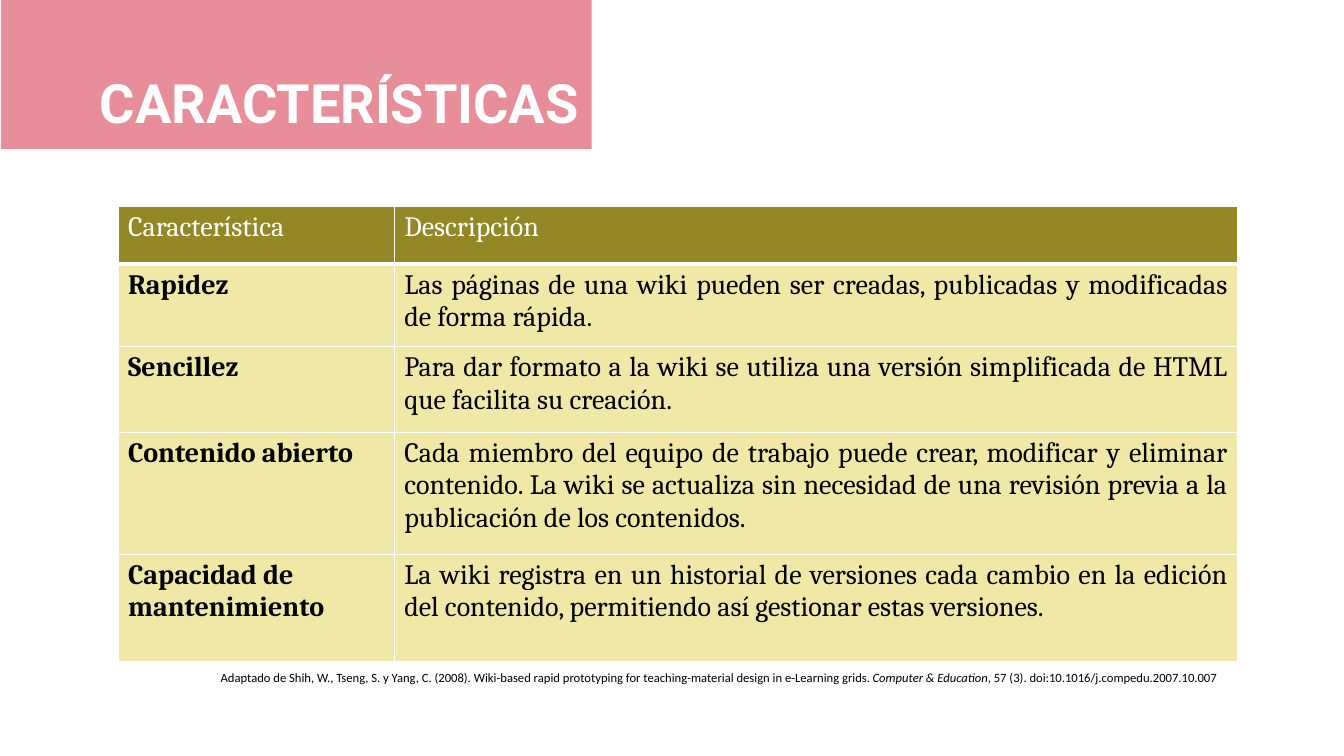
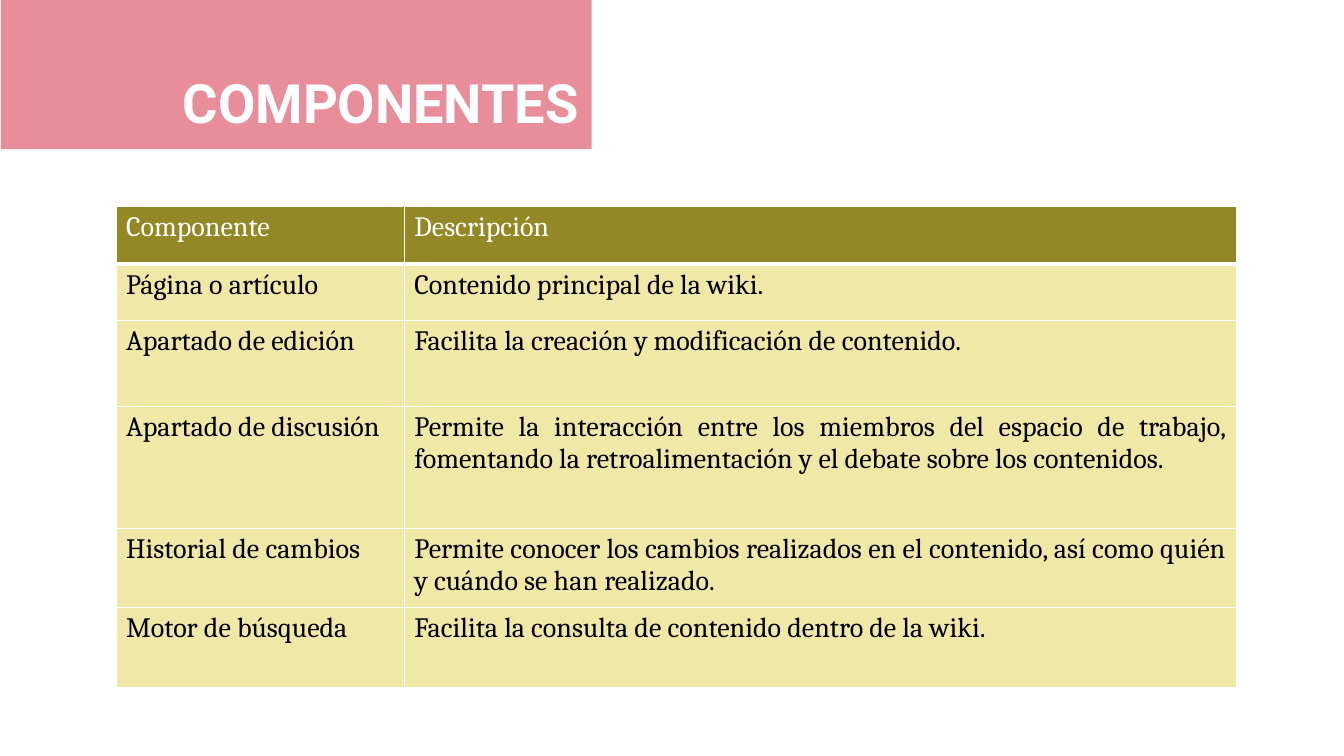
from lxml.etree import SubElement
from pptx import Presentation
from pptx.dml.color import RGBColor
from pptx.enum.shapes import MSO_SHAPE as Shape
from pptx.enum.text import PP_ALIGN as Align
from pptx.oxml.ns import qn
from pptx.util import Inches, Pt

COLORS = {
    "band": "E88E9B",
    "header": "938825",
    "body": "F0E8A7",
    "light": "FFFFFF",
    "dark": "000000",
}
SLIDE_WIDTH, SLIDE_HEIGHT = 13.33, 7.5
BAND_BOX = (0.01, 0, 5.86, 1.48)
TABLE_TOP, TABLE_WIDTH = 2.05, 11.11

FEATURES = [
    ("Característica", "Descripción"),
    ("Rapidez",
     "Las páginas de una wiki pueden ser creadas, publicadas y modificadas "
     "de forma rápida."),
    ("Sencillez",
     "Para dar formato a la wiki se utiliza una versión simplificada de HTML "
     "que facilita su creación."),
    ("Contenido abierto",
     "Cada miembro del equipo de trabajo puede crear, modificar y eliminar "
     "contenido. La wiki se actualiza sin necesidad de una revisión previa a "
     "la publicación de los contenidos."),
    ("Capacidad de mantenimiento",
     "La wiki registra en un historial de versiones cada cambio en la edición "
     "del contenido, permitiendo así gestionar estas versiones."),
]
COMPONENTS = [
    ("Componente", "Descripción"),
    ("Página o artículo", "Contenido principal de la wiki."),
    ("Apartado de edición",
     "Facilita la creación y modificación de contenido."),
    ("Apartado de discusión",
     "Permite la interacción entre los miembros del espacio de trabajo, "
     "fomentando la retroalimentación y el debate sobre los contenidos."),
    ("Historial de cambios",
     "Permite conocer los cambios realizados en el contenido, así como quién "
     "y cuándo se han realizado."),
    ("Motor de búsqueda",
     "Facilita la consulta de contenido dentro de la wiki."),
]
SOURCE = [
    ("Adaptado de Shih, W., Tseng, S. y Yang, C. (2008). Wiki-based rapid "
     "prototyping for teaching-material design in e-Learning grids. ", False),
    ("Computer & Education", True),
    (", 57 (3). doi:10.1016/j.compedu.2007.10.007", False),
]


def rgb(name):
    return RGBColor.from_string(COLORS[name])


def write(frame, *runs, font, size, color="dark", bold=False, align=Align.LEFT):
    """Fill the first paragraph with (text, italic) runs."""
    frame.word_wrap = True
    paragraph = frame.paragraphs[0]
    paragraph.alignment = align
    for text, italic in runs:
        run = paragraph.add_run()
        run.text = text
        run.font.name, run.font.size = font, Pt(size)
        run.font.bold, run.font.italic = bold, italic
        run.font.color.rgb = rgb(color)


def add_text(slide, box, *runs, margin=None, **text_format):
    frame = slide.shapes.add_textbox(*map(Inches, box)).text_frame
    if margin is not None:
        frame.margin_left = frame.margin_right = Inches(margin)
        frame.margin_top = frame.margin_bottom = Inches(margin)
    write(frame, *runs, **text_format)


def add_title_band(slide, box, title):
    left, top, width, height = box
    band = slide.shapes.add_shape(Shape.RECTANGLE, *map(Inches, box))
    band.shadow.inherit = False
    band.fill.solid()
    band.fill.fore_color.rgb = rgb("band")
    band.line.fill.background()
    title_box = (left, top + height * 0.38, width, height / 2)
    add_text(slide, title_box, (title, False), margin=0.13, font="Roboto",
             size=38.7, color="light", bold=True, align=Align.RIGHT)


def set_borders(cell, bottom):
    properties = cell._tc.get_or_add_tcPr()
    for side, width in (("L", 1), ("R", 1), ("T", 1), ("B", bottom)):
        line = SubElement(properties, qn(f"a:ln{side}"), w=str(Pt(width)))
        fill = SubElement(line, qn("a:solidFill"))
        SubElement(fill, qn("a:srgbClr"), val=COLORS["light"])


def add_description_table(slide, left, rows, first_column, heights,
                          bold_names=False):
    frame = slide.shapes.add_table(
        len(rows), 2, Inches(left), Inches(TABLE_TOP),
        Inches(TABLE_WIDTH), Inches(sum(heights)))
    table = frame.table
    table.horz_banding = False
    for column, width in zip(table.columns,
                             (first_column, TABLE_WIDTH - first_column)):
        column.width = Inches(width)
    for row_index, (texts, height) in enumerate(zip(rows, heights)):
        table.rows[row_index].height = Inches(height)
        is_header = row_index == 0
        for column_index, text in enumerate(texts):
            cell = table.cell(row_index, column_index)
            is_name = column_index == 0
            set_borders(cell, bottom=3 if is_header else 1)
            cell.fill.solid()
            cell.fill.fore_color.rgb = rgb("header" if is_header else "body")
            write(cell.text_frame, (text, False), font="Cambria", size=20,
                  color="light" if is_header else "dark",
                  bold=bold_names and is_name and not is_header,
                  align=Align.LEFT if is_header or is_name else Align.JUSTIFY)


def add_titled_slide(presentation, title):
    slide = presentation.slides.add_slide(presentation.slide_layouts[6])
    add_title_band(slide, BAND_BOX, title)
    return slide


def main():
    presentation = Presentation()
    presentation.slide_width = Inches(SLIDE_WIDTH)
    presentation.slide_height = Inches(SLIDE_HEIGHT)

    features = add_titled_slide(presentation, "CARACTERÍSTICAS")
    add_description_table(features, 1.17, FEATURES, 2.74,
                          (0.57, 0.82, 0.85, 1.21, 1.06), bold_names=True)
    add_text(features, (2.09, 6.6, 10.19, 0.25), *SOURCE,
             font="Calibri", size=9)

    components = add_titled_slide(presentation, "COMPONENTES")
    add_description_table(components, 1.15, COMPONENTS, 2.86,
                          (0.57, 0.56, 0.85, 1.21, 0.79, 0.79))

    presentation.save("out.pptx")


if __name__ == "__main__":
    main()
